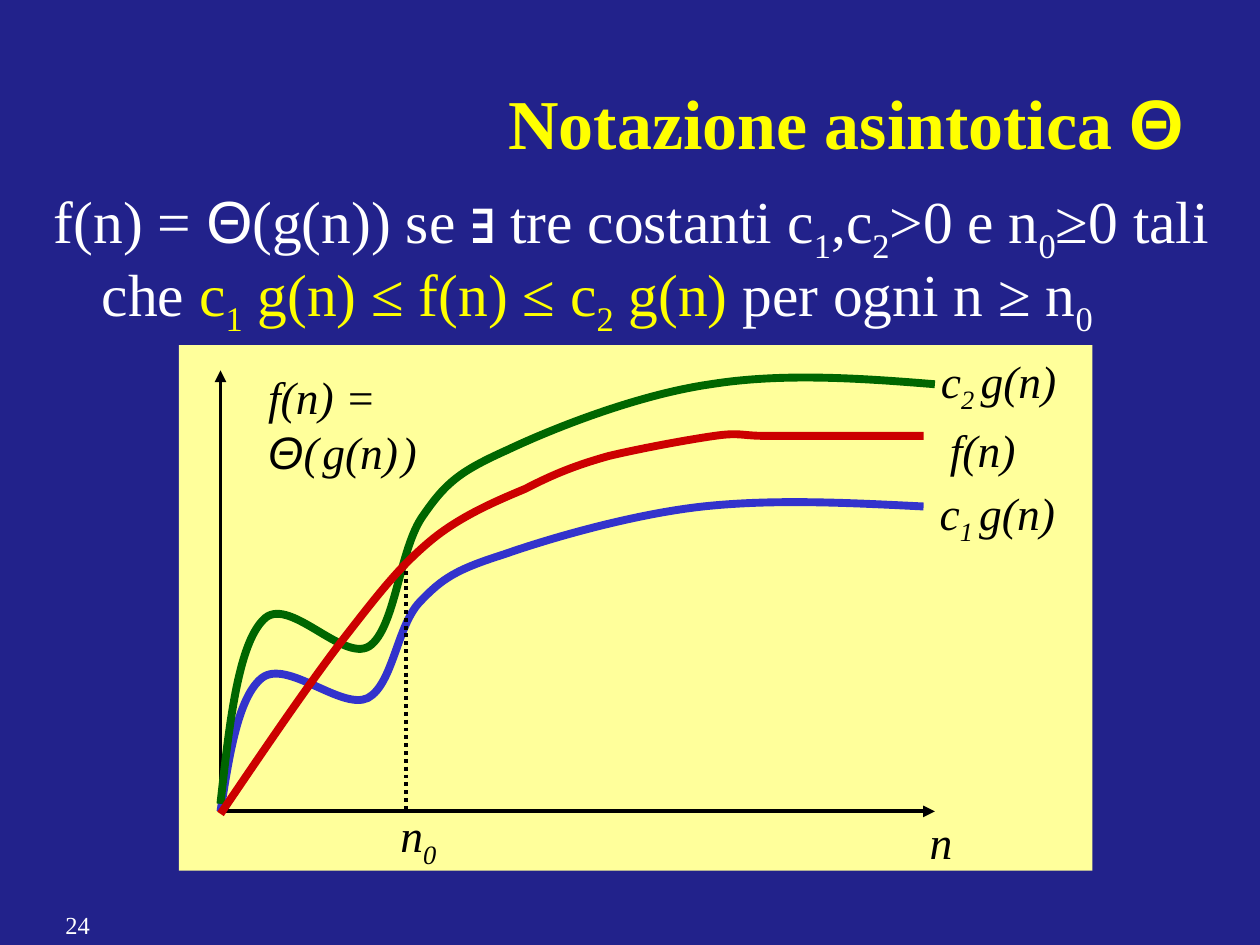
from lxml import etree
from pptx import Presentation
from pptx import util as u
from pptx.dml.color import RGBColor
from pptx.enum import dml, shapes, text
from pptx.oxml.ns import qn

HUE = dict(back="22228B", panel="FFFF9B", white="FFFFFF", yellow="FFFF00",
           black="000000", blue="3333CC", green="006600", red="CC0000")
SERIF, SANS = "Times New Roman", "Arial"

# Content: a run is (text, options); text starting with "_" is a subscript
TITLE = [("Notazione asintotica ", {}), ("Θ", {})]
YEL = {"hue": "yellow"}
BODY = [("f(n) = ", {}), ("Θ", {}), ("(g(n)) se ∃ tre costanti c", {}), ("_1", {}),
        (",c", {}), ("_2", {}), (">0 e n", {}), ("_0", {}), ("≥0 tali che ", {}),
        ("c", YEL), ("_1", YEL), (" g(n) ≤ f(n) ≤ c", YEL), ("_2", YEL),
        (" g(n)", YEL), (" per ogni n ≥ n", {}), ("_0", {})]
PAGE = [("24", {})]
GAP, THIN = {"size": 14}, {"size": 8}

# Graph labels: box, wraps, runs
LABELS = [
    ((3.08, 6.36, 0.5, 0.53), False, [("n", {}), ("_0", {})]),
    ((7.28, 6.41, 0.38, 0.53), False, [("n", {})]),
    ((2.03, 2.88, 1.9, 0.97), True,
     [("f(n) = ", {}), ("Θ", {}), ("(", {}), (" ", THIN), ("g(n)", {}),
      (" ", THIN), (")", {})]),
    ((7.44, 3.3, 0.72, 0.53), False, [("f(n)", {})]),
    ((7.36, 3.8, 1.13, 0.53), False,
     [("c", {}), ("_1", {}), (" ", GAP), ("g(n)", {})]),
    ((7.37, 2.75, 1.13, 0.53), False,
     [("c", {}), ("_2", {}), (" ", GAP), ("g(n)", {})]),
]

# Curves: a start point, then three Bezier points per segment
CURVES = [
    ("blue", [(1.75, 6.44), (1.82, 5.99), (1.89, 5.53), (2.08, 5.38),
              (2.28, 5.23), (2.71, 5.64), (2.92, 5.54),
              (3.12, 5.43), (3.15, 4.97), (3.33, 4.78),
              (3.51, 4.59), (3.62, 4.52), (4, 4.4),
              (4.37, 4.27), (5.03, 4.08), (5.58, 4.02),
              (6.14, 3.96), (6.73, 3.99), (7.33, 4.02)]),
    ("green", [(1.75, 6.38), (1.82, 5.75), (1.89, 5.12), (2.09, 4.92),
               (2.28, 4.71), (2.72, 5.26), (2.93, 5.13),
               (3.14, 4.99), (3.17, 4.35), (3.36, 4.09),
               (3.54, 3.83), (3.65, 3.74), (4.03, 3.57),
               (4.41, 3.39), (5.08, 3.13), (5.64, 3.05),
               (6.2, 2.96), (6.81, 3), (7.42, 3.05)]),
    ("red", [(1.75, 6.46), (2.11, 5.93), (2.47, 5.4), (2.75, 5.04),
             (3.03, 4.68), (3.18, 4.49), (3.42, 4.29),
             (3.65, 4.1), (3.93, 3.98), (4.17, 3.88),
             (4.4, 3.76), (4.58, 3.69), (4.83, 3.62),
             (5.08, 3.56), (5.46, 3.49), (5.67, 3.46),
             (5.88, 3.43), (5.88, 3.46), (6.08, 3.46),
             (6.29, 3.46), (6.71, 3.46), (6.92, 3.46),
             (7.12, 3.46), (7.26, 3.46), (7.33, 3.46)]),
]
ZERO = (1.75, 6.44)
AXES = [(1.75, 2.94), (7.42, 6.44)]
MARK = [(3.22, 4.53), (3.22, 6.44)]


def rgb(name):
    return RGBColor.from_string(HUE[name])


def place(shape, box):
    shape.left, shape.top, shape.width, shape.height = map(u.Inches, box)


def write(shape, runs, size, hue, bold=False, italic=False, wrap=True):
    frame = shape.text_frame
    frame.word_wrap = wrap
    frame.auto_size = (text.MSO_AUTO_SIZE.NONE if wrap
                       else text.MSO_AUTO_SIZE.SHAPE_TO_FIT_TEXT)
    frame.vertical_anchor = text.MSO_ANCHOR.TOP
    para = frame.paragraphs[0]
    for words, opts in runs:
        run = para.add_run()
        run.text = words.lstrip("_")
        font = run.font
        font.name = SANS if words == "Θ" else SERIF
        font.size = u.Pt(opts.get("size", size))
        font.color.rgb = rgb(opts.get("hue", hue))
        font.bold, font.italic = bold, italic
        if words.startswith("_"):
            run._r.get_or_add_rPr().set("baseline", "-25000")
    return para


def label(slide, box, *args, **opts):
    return write(slide.shapes.add_textbox(*map(u.Inches, box)), *args, **opts)


def line(slide, start, end, arrow=False):
    wire = slide.shapes.add_connector(
        shapes.MSO_CONNECTOR.STRAIGHT, *map(u.Inches, start + end))
    wire.line.color.rgb = rgb("black")
    wire.line.width = u.Pt(2.25)
    if arrow:
        etree.SubElement(wire.line._get_or_add_ln(), qn("a:tailEnd"), type="triangle")
    else:
        wire.line.dash_style = dml.MSO_LINE.ROUND_DOT
    etree.SubElement(wire._element.spPr, qn("a:effectLst"))


def curve(slide, hue, points):
    spots = [(u.Inches(x), u.Inches(y)) for x, y in points]
    pen = slide.shapes.build_freeform(*spots[0])
    pen.add_line_segments(spots[1:], close=False)
    shape = pen.convert_to_shape()
    # Join each three straight steps into one Bezier segment
    steps = list(shape._element.iter(qn("a:lnTo")))
    for i in range(0, len(steps), 3):
        bend = etree.Element(qn("a:cubicBezTo"))
        steps[i].addprevious(bend)
        for step in steps[i:i + 3]:
            bend.append(step[0])
            step.getparent().remove(step)
    shape.fill.background()
    shape.line.color.rgb = rgb(hue)
    shape.line.width = u.Pt(4.5)
    shape.shadow.inherit = False


def main():
    deck = Presentation()
    deck.slide_width, deck.slide_height = u.Inches(10), u.Inches(7.5)
    slide = deck.slides.add_slide(deck.slide_layouts[5])
    slide.background.fill.solid()
    slide.background.fill.fore_color.rgb = rgb("back")

    # Title and definition
    title = slide.shapes.title
    place(title, (0.5, 0.58, 9, 1))
    para = write(title, TITLE, 40, "yellow", bold=True)
    para.alignment = text.PP_ALIGN.RIGHT
    para.space_before = u.Pt(5)
    para = label(slide, (0.33, 1.42, 9.5, 2.67), BODY, 34, "white")
    para.line_spacing, para.space_before = 0.9, u.Pt(6.8)
    props = para._p.get_or_add_pPr()
    props.set("marL", str(u.Inches(0.38)))
    props.set("indent", str(-u.Inches(0.38)))

    # Graph panel, axes, curves and threshold
    panel = slide.shapes.add_shape(
        shapes.MSO_SHAPE.RECTANGLE, *map(u.Inches, (1.42, 2.74, 7.25, 4.17)))
    panel.fill.solid()
    panel.fill.fore_color.rgb = rgb("panel")
    panel.line.fill.background()
    panel.shadow.inherit = False
    for end in AXES:
        line(slide, ZERO, end, arrow=True)
    for hue, points in CURVES:
        curve(slide, hue, points)
    line(slide, *MARK)
    for box, wrap, runs in LABELS:
        label(slide, box, runs, 26, "black", italic=True, wrap=wrap)

    # Page number
    label(slide, (0.42, 7.17, 2.08, 0.33), PAGE, 14, "white")
    deck.save("out.pptx")


if __name__ == "__main__":
    main()
